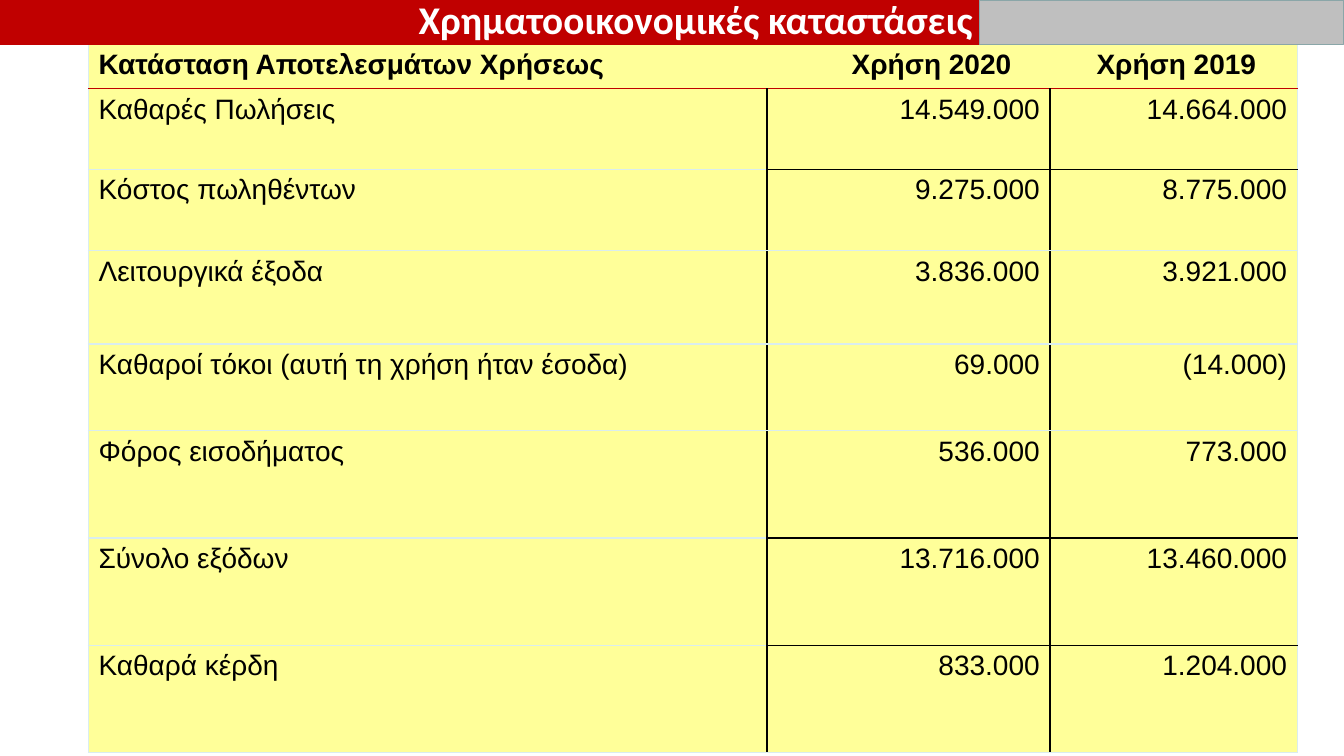
from pptx import Presentation, util as u
from pptx.dml import color
from pptx.enum import shapes, text
from pptx.oxml import xmlchemy as xml

RED, GREY, PALE, CREAM = "C00000", "BFBFBF", "DAEDEF", "FFFF99"
BLACK, WHITE = "000000", "FFFFFF"
HEAD = "Κατάσταση Αποτελεσμάτων Χρήσεως\tΧρήση 2020\tΧρήση 2019"
ROWS = [
    ("Καθαρές Πωλήσεις", "14.549.000", "14.664.000", 2.03),
    ("Κόστος πωληθέντων", "9.275.000", "8.775.000", 2.05),
    ("Λειτουργικά έξοδα", "3.836.000", "3.921.000", 2.35),
    ("Καθαροί τόκοι (αυτή τη χρήση ήταν έσοδα)", "69.000", "(14.000)", 2.19),
    ("Φόρος εισοδήματος", "536.000", "773.000", 2.7),
    ("Σύνολο εξόδων", "13.716.000", "13.460.000", 2.7),
    ("Καθαρά κέρδη", "833.000", "1.204.000", 2.7),
]
WIDTHS = [17.1, 7.13, 6.23]
TABS = [18.98, 25.15]
RULED = {1, 5, 6}


def rgb(code):
    """Turn a hex string into a colour."""
    return color.RGBColor.from_string(code)


def edge(row, col):
    """Pick the line colour of each side of a table cell."""
    def level(num):
        if num == 0:
            return RED
        return BLACK if num in RULED and col else PALE

    def side(num):
        return BLACK if row and num in (1, 2) else PALE

    top = level(row - 1) if row else PALE
    return {"L": side(col), "R": side(col + 1), "T": top, "B": level(row)}


class Deck:
    """Hold the style and the current slide."""

    body = {"name": "Arial", "size": u.Pt(20), "bold": False}
    title = {"name": "Calibri", "size": u.Pt(28), "bold": True}

    def __init__(self):
        """Open a deck with one blank slide."""
        self.prs = Presentation()
        self.prs.slide_width, self.prs.slide_height = u.Cm(33.87), u.Cm(19.05)
        self.slide = self.prs.slides.add_slide(self.prs.slide_layouts[6])

    def put(self, para, words, style, ink, right=False):
        """Put styled words in a paragraph."""
        run = para.add_run()
        run.text = words
        for key, val in style.items():
            setattr(run.font, key, val)
        run.font.color.rgb = rgb(ink)
        para.alignment = text.PP_ALIGN.RIGHT if right else text.PP_ALIGN.LEFT

    def bar(self, left, width, fill, line, weight, words=""):
        """Draw a bar along the top of the slide."""
        box = self.slide.shapes.add_shape(
            shapes.MSO_SHAPE.RECTANGLE, u.Cm(left), 0, u.Cm(width), u.Cm(1.12))
        box.shadow.inherit = False
        box.fill.solid()
        box.fill.fore_color.rgb = rgb(fill)
        box.line.color.rgb = rgb(line)
        box.line.width = u.Pt(weight)
        if words:
            frame = box.text_frame
            frame.word_wrap = True
            frame.vertical_anchor = text.MSO_ANCHOR.MIDDLE
            frame.margin_left = frame.margin_right = u.Cm(0.18)
            frame.margin_top = frame.margin_bottom = u.Cm(0.1)
            para = frame.paragraphs[0]
            para.line_spacing = 0.9
            self.put(para, words, self.title, WHITE, True)

    def paint(self, cell, lines):
        """Give a cell its borders and fill."""
        prop = cell._tc.get_or_add_tcPr()
        for side, ink in lines.items():
            line = xml.OxmlElement(f"a:ln{side}")
            line.set("w", str(u.Pt(1)))
            fill = xml.OxmlElement("a:solidFill")
            tint = xml.OxmlElement("a:srgbClr")
            tint.set("val", ink)
            fill.append(tint)
            line.append(fill)
            prop.append(line)
        cell.fill.solid()
        cell.fill.fore_color.rgb = rgb(CREAM)

    def stops(self, para, places):
        """Set the left tab stops of a paragraph."""
        tabs = xml.OxmlElement("a:tabLst")
        for place in places:
            tab = xml.OxmlElement("a:tab")
            tab.set("pos", str(u.Cm(place)))
            tab.set("algn", "l")
            tabs.append(tab)
        para._p.get_or_add_pPr().append(tabs)

    def table(self, left, top):
        """Build the income statement."""
        highs = [1.12] + [row[-1] for row in ROWS]
        grid = self.slide.shapes.add_table(
            len(highs), len(WIDTHS), u.Cm(left), u.Cm(top),
            u.Cm(sum(WIDTHS)), u.Cm(sum(highs))).table
        grid.first_row = grid.horz_banding = False
        for col, width in zip(grid.columns, WIDTHS):
            col.width = u.Cm(width)
        for num, high in enumerate(highs):
            grid.rows[num].height = u.Cm(high)
            for col in range(len(WIDTHS)):
                cell = grid.cell(num, col)
                self.paint(cell, edge(num, col))
                if num:
                    self.put(cell.text_frame.paragraphs[0], ROWS[num - 1][col],
                             self.body, BLACK, col > 0)
        first = grid.cell(0, 0)
        first.merge(grid.cell(0, len(WIDTHS) - 1))
        para = first.text_frame.paragraphs[0]
        self.put(para, HEAD, self.body | {"bold": True}, BLACK)
        self.stops(para, TABS)


def main():
    """Build and save the slide."""
    deck = Deck()
    deck.table(2.23, 1.12)
    deck.bar(0, 24.69, RED, RED, 0.75, "Χρηματοοικονομικές καταστάσεις")
    deck.bar(24.69, 9.17, GREY, "8AA6A8", 1)
    deck.prs.save("out.pptx")


if __name__ == "__main__":
    main()
